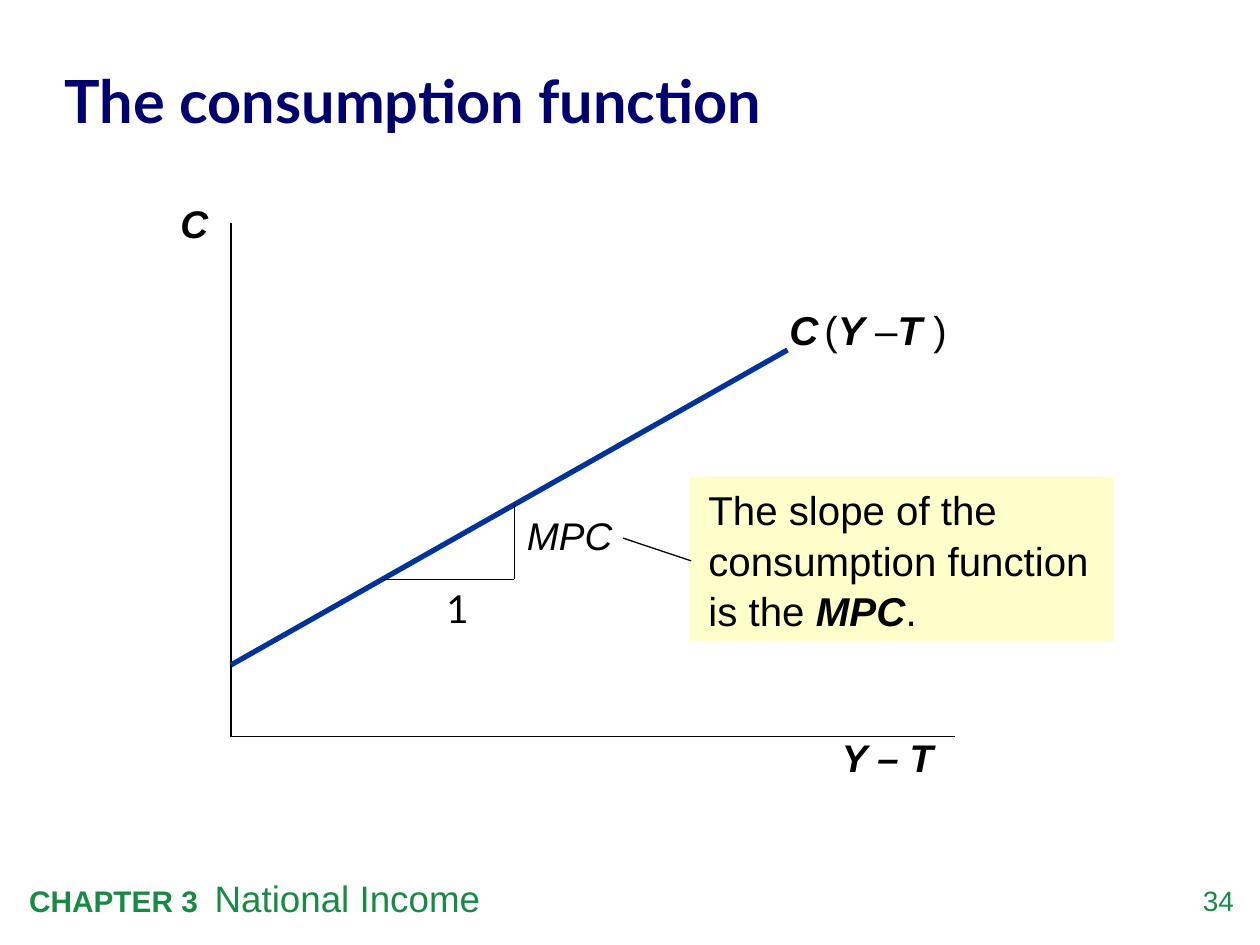
from lxml.etree import SubElement
from pptx import Presentation
from pptx.dml.color import RGBColor
from pptx.enum.shapes import MSO_CONNECTOR, MSO_SHAPE
from pptx.enum.text import MSO_ANCHOR, PP_ALIGN
from pptx.oxml.ns import qn
from pptx.util import Pt

COLORS = {
    "title": "00006E",
    "footer": "198A46",
    "ink": "000000",
    "curve": "003399",
    "note": "FFFFCC",
}
BOLD_ITALIC = {"bold": True, "italic": True}


def color(name):
    """Return the named colour."""
    return RGBColor.from_string(COLORS[name])


def set_font(font, size, name="Arial", ink="ink", bold=False, italic=False):
    """Format one font."""
    font.name = name
    font.size = Pt(size)
    font.bold = bold
    font.italic = italic
    font.color.rgb = color(ink)


def set_margins(text_frame, horizontal, vertical):
    """Set equal side margins and equal top and bottom margins."""
    text_frame.margin_left = text_frame.margin_right = Pt(horizontal)
    text_frame.margin_top = text_frame.margin_bottom = Pt(vertical)


def add_runs(paragraph, runs, **style):
    """Fill a paragraph with (text, own formatting) runs on a shared style."""
    for text, own in runs:
        run = paragraph.add_run()
        run.text = text
        set_font(run.font, **{**style, **own})


def add_text_box(slide, box, margins=(7.2, 3.6)):
    """Add a wrapping text box and return its text frame."""
    text_frame = slide.shapes.add_textbox(*map(Pt, box)).text_frame
    text_frame.word_wrap = True
    set_margins(text_frame, *margins)
    return text_frame


def add_label(slide, box, text, size=22, align=PP_ALIGN.LEFT, margins=(7.2, 3.6), **style):
    """Add a label in one style."""
    paragraph = add_text_box(slide, box, margins).paragraphs[0]
    paragraph.text = text
    paragraph.alignment = align
    set_font(paragraph.font, size, **style)


def add_line(slide, start, end, width=0.75, ink="ink"):
    """Draw a straight line without a shadow."""
    line = slide.shapes.add_connector(MSO_CONNECTOR.STRAIGHT, *map(Pt, (*start, *end)))
    line.line.width = Pt(width)
    line.line.color.rgb = color(ink)
    SubElement(line._element.spPr, qn("a:effectLst"))


def add_title(slide, box, text):
    """Place and format the title placeholder."""
    title = slide.shapes.title
    title.left, title.top, title.width, title.height = map(Pt, box)
    text_frame = title.text_frame
    text_frame.text = text
    text_frame.vertical_anchor = MSO_ANCHOR.MIDDLE
    set_margins(text_frame, 0, 0)
    paragraph = text_frame.paragraphs[0]
    paragraph.alignment = PP_ALIGN.LEFT
    paragraph.line_spacing = 1.05
    set_font(paragraph.font, 34, "Lato", "title", bold=True)


def add_footer(slide, box):
    """Add the chapter name and the slide number."""
    left, top, width, height = box
    paragraph = add_text_box(slide, (left, top, 589, height)).paragraphs[0]
    runs = [("CHAPTER 3  ", {"size": 17, "bold": True}), ("National Income", {"size": 21})]
    add_runs(paragraph, runs, ink="footer")
    number_box = (left + width - 40, top + 8, 40, 23)
    add_label(slide, number_box, "34", 16, PP_ALIGN.RIGHT, (0, 0), ink="footer")


def add_axes(slide, box):
    """Draw both axes along the left and bottom of the box, with their names."""
    left, top, width, height = box
    bottom = top + height
    add_line(slide, (left, top), (left, bottom))
    add_line(slide, (left, bottom), (left + width, bottom))
    add_label(slide, (left - 36, top - 17, 36, 34), "C", **BOLD_ITALIC)
    add_label(slide, (left + width - 72, bottom - 5, 84, 34), "Y – T", **BOLD_ITALIC)


def add_curve(slide, box):
    """Draw the consumption line across the box and name its upper end."""
    left, top, width, height = box
    right = left + width
    add_line(slide, (left, top + height), (right, top), 3, "curve")
    paragraph = add_text_box(slide, (right - 6, top - 29, 108, 35)).paragraphs[0]
    runs = [
        ("C", BOLD_ITALIC),
        (" ", {"size": 12, **BOLD_ITALIC}),
        ("(", {}),
        ("Y ", BOLD_ITALIC),
        ("–", {}),
        ("T ", BOLD_ITALIC),
        (")", {}),
    ]
    add_runs(paragraph, runs, size=23)


def add_slope_triangle(slide, box):
    """Draw the run and the rise of the slope, with their labels."""
    left, top, width, height = box
    right, bottom = left + width, top + height
    add_line(slide, (left, bottom), (right, bottom))
    add_line(slide, (right, bottom), (right, top))
    add_label(slide, (left + 30, bottom, 29, 34), "1", name="Lato")
    add_label(slide, (right, top + 1, 84, 34), "MPC", italic=True)


def add_slope_note(slide, box):
    """Add the note on the slope and its pointer."""
    left, top, width, height = box
    note = slide.shapes.add_shape(MSO_SHAPE.RECTANGLE, *map(Pt, box))
    note.shadow.inherit = False
    note.fill.solid()
    note.fill.fore_color.rgb = color("note")
    note.line.fill.background()
    text_frame = note.text_frame
    text_frame.word_wrap = True
    text_frame.vertical_anchor = MSO_ANCHOR.TOP
    set_margins(text_frame, 10.8, 3.6)
    paragraph = text_frame.paragraphs[0]
    paragraph.alignment = PP_ALIGN.LEFT
    paragraph.line_spacing = 1.05
    runs = [
        ("The slope of the consumption function is the ", {}),
        ("MPC", BOLD_ITALIC),
        (".", {}),
    ]
    add_runs(paragraph, runs, size=23)
    add_line(slide, (left + 1, top + 48), (left - 38, top + 35))


def main():
    """Build the slide and save it."""
    presentation = Presentation()
    presentation.slide_width, presentation.slide_height = Pt(720), Pt(540)
    slide = presentation.slides.add_slide(presentation.slide_layouts[5])
    add_footer(slide, (9.5, 497, 695.5, 32))
    add_title(slide, (37, 19, 649, 74), "The consumption function")
    add_axes(slide, (132, 127.5, 414, 293.5))
    add_curve(slide, (132, 200, 318, 180))
    add_slope_triangle(slide, (218, 288, 76, 43))
    add_slope_note(slide, (394, 272.5, 242.5, 94))
    presentation.save("out.pptx")


if __name__ == "__main__":
    main()
